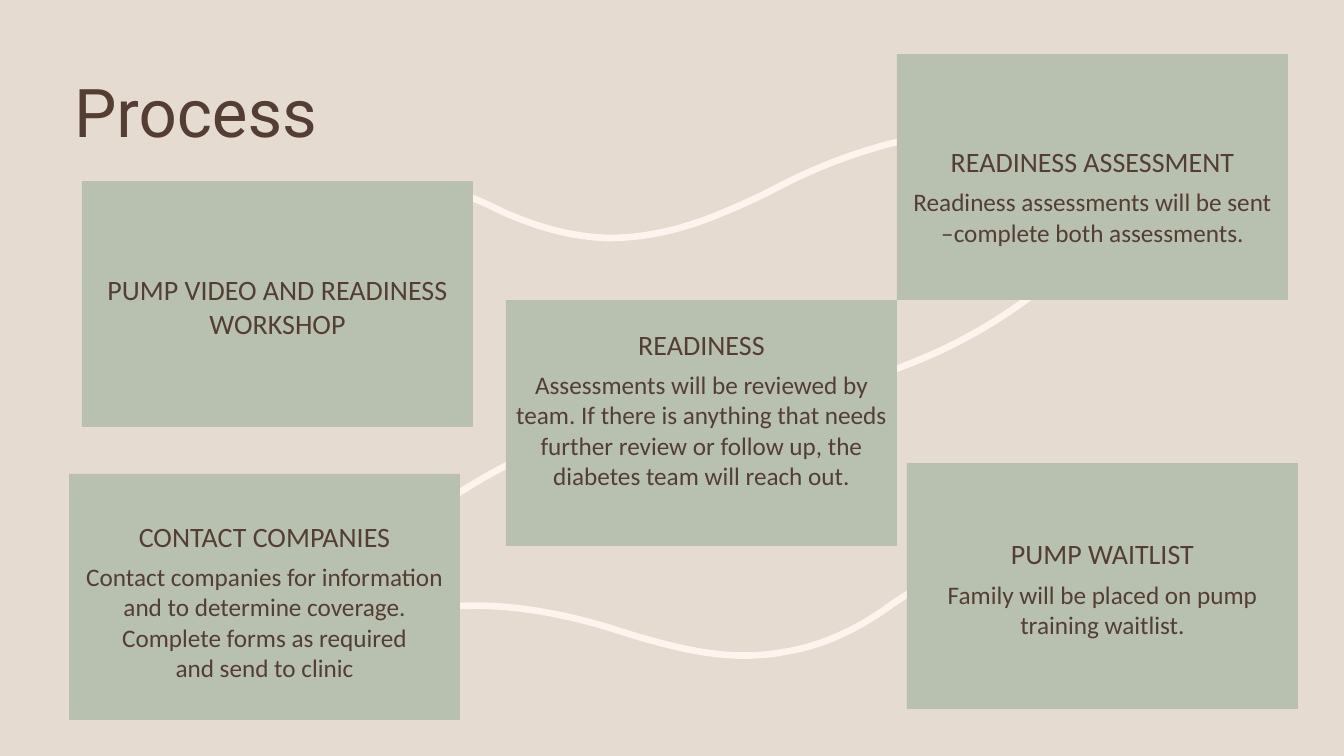
import pptx
import pptx.util
import pptx.dml.color
import pptx.enum.shapes
import pptx.enum.text

SLIDE_W, SLIDE_H = 1344, 756
EMU_PER_PX = 12192000 / SLIDE_W
COLORS = {"background": "E6DBD0", "trail": "FEF3ED", "card": "B8C0B0", "ink": "543E34"}
TITLE = "Process"
TITLE_BOX = (64, 78, 1159, 75)
CARD_W, CARD_H, CARD_INSET = 391, 246, 8
CURVE_STEPS = 16

STEPS = [
    {"at": (897, 54), "shift": 19, "heading": "READINESS ASSESSMENT",
     "details": ["Readiness assessments will be sent –complete both assessments."]},
    {"at": (82, 181), "shift": 2, "heading": "PUMP VIDEO AND READINESS WORKSHOP",
     "details": []},
    {"at": (506, 300), "shift": -14, "heading": "READINESS",
     "details": ["Assessments will be reviewed by team. If there is anything that needs "
                 "further review or follow up, the diabetes team will reach out."]},
    {"at": (907, 463), "shift": 2, "heading": "PUMP WAITLIST",
     "details": ["Family will be placed on pump", "training waitlist."]},
    {"at": (69, 474), "shift": 4, "heading": "CONTACT COMPANIES",
     "details": ["Contact companies for information and to determine coverage.",
                 "Complete forms as required", "and send to clinic"]},
]

TRAILS = [
    [(840, 386), (920, 366), (993, 330), (1055, 277)],
    [(589, 431), (513, 456), (449, 494), (392, 543)],
    [(309, 225), (353, 188), (401, 178), (453, 192), (470, 196), (485, 203), (501, 211),
     (534, 226), (570, 237), (609, 238), (642, 238), (675, 231), (707, 219),
     (743, 205), (763, 195), (784, 184), (807, 172), (948, 104), (1035, 147)],
    [(927, 584), (911, 591), (898, 600), (884, 610), (855, 630), (822, 646), (784, 652),
     (752, 658), (720, 656), (686, 649), (650, 641), (629, 634), (607, 627),
     (583, 620), (437, 575), (350, 641)],
]


def px(length):
    return pptx.util.Emu(round(length * EMU_PER_PX))


def color(name):
    return pptx.dml.color.RGBColor.from_string(COLORS[name])


def add_run(paragraph, text, size, font):
    run = paragraph.add_run()
    run.text = text
    run.font.size = pptx.util.Pt(size)
    run.font.name = font
    run.font.color.rgb = color("ink")


def bezier_point(controls, t):
    weights = ((1 - t) ** 3, 3 * t * (1 - t) ** 2, 3 * t ** 2 * (1 - t), t ** 3)
    return tuple(px(sum(w * c[axis] for w, c in zip(weights, controls))) for axis in (0, 1))


def add_trail(slide, controls):
    points = [bezier_point(controls[start:start + 4], step / CURVE_STEPS)
              for start in range(0, len(controls) - 1, 3)
              for step in range(1, CURVE_STEPS + 1)]
    builder = slide.shapes.build_freeform(px(controls[0][0]), px(controls[0][1]))
    builder.add_line_segments(points, close=False)
    trail = builder.convert_to_shape()
    trail.shadow.inherit = False
    trail.fill.background()
    trail.line.color.rgb = color("trail")
    trail.line.width = pptx.util.Pt(4.75)


def add_card(slide, step):
    left, top = step["at"]
    card = slide.shapes.add_shape(pptx.enum.shapes.MSO_SHAPE.RECTANGLE,
                                  px(left), px(top), px(CARD_W), px(CARD_H))
    card.shadow.inherit = False
    card.fill.solid()
    card.fill.fore_color.rgb = color("card")
    card.line.fill.background()
    frame = card.text_frame
    frame.word_wrap = True
    frame.vertical_anchor = pptx.enum.text.MSO_ANCHOR.MIDDLE
    frame.margin_left = frame.margin_right = px(CARD_INSET)
    frame.margin_top = px(max(0, 2 * step["shift"]))
    frame.margin_bottom = px(max(0, -2 * step["shift"]))
    heading = frame.paragraphs[0]
    add_run(heading, step["heading"], 20, "Calibri")
    if step["details"]:
        heading.space_after = pptx.util.Pt(6)
    for detail in step["details"]:
        add_run(frame.add_paragraph(), detail, 18, "Calibri")
    for paragraph in frame.paragraphs:
        paragraph.alignment = pptx.enum.text.PP_ALIGN.CENTER


def add_title(slide):
    title = slide.shapes.title
    title.left, title.top, title.width, title.height = map(px, TITLE_BOX)
    title.text_frame.vertical_anchor = pptx.enum.text.MSO_ANCHOR.MIDDLE
    paragraph = title.text_frame.paragraphs[0]
    paragraph.alignment = pptx.enum.text.PP_ALIGN.LEFT
    paragraph.line_spacing = 0.9
    add_run(paragraph, TITLE, 48, "Roboto")


def main():
    deck = pptx.Presentation()
    deck.slide_width, deck.slide_height = px(SLIDE_W), px(SLIDE_H)
    slide = deck.slides.add_slide(deck.slide_layouts[5])
    slide.background.fill.solid()
    slide.background.fill.fore_color.rgb = color("background")
    add_title(slide)
    for controls in TRAILS:
        add_trail(slide, controls)
    for step in STEPS:
        add_card(slide, step)
    deck.save("out.pptx")


if __name__ == "__main__":
    main()
